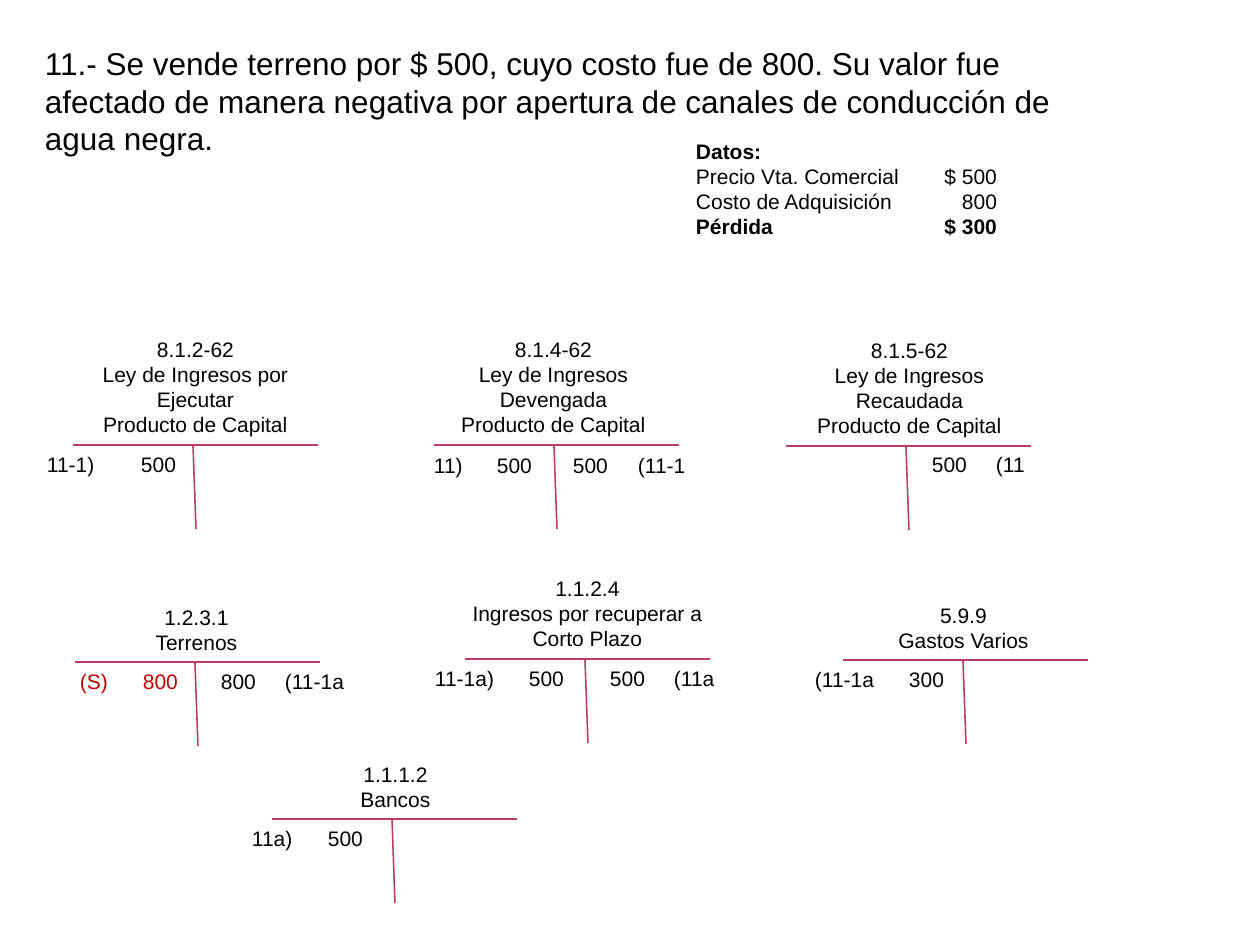
from dataclasses import dataclass
from typing import Any

from lxml.etree import SubElement
from pptx import Presentation
from pptx.dml.color import RGBColor
from pptx.enum.shapes import MSO_CONNECTOR
from pptx.enum.text import MSO_ANCHOR, PP_ALIGN
from pptx.oxml.ns import qn
from pptx.util import Emu, Pt

COLORS = {"text": "000000", "rule": "B83D68", "opening": "C00000"}
FONT = "Arial"
INSET = 13
TITLE_WIDTH = 267

# rule left, rule top, title left, title height, title inset, title lines
ACCOUNTS = [
    (73, 445, 62, 115, 25,
     ["8.1.2-62", "Ley de Ingresos por Ejecutar", "Producto de Capital"]),
    (434, 445, 420, 115, 25,
     ["8.1.4-62", "Ley de Ingresos Devengada", "Producto de Capital"]),
    (786, 446, 776, 115, 25,
     ["8.1.5-62", "Ley de Ingresos Recaudada", "Producto de Capital"]),
    (75, 662, 63, 64, INSET, ["1.2.3.1", "Terrenos"]),
    (465, 659, 454, 90, INSET, ["1.1.2.4", "Ingresos por recuperar a Corto Plazo"]),
    (843, 660, 830, 64, INSET, ["5.9.9", "Gastos Varios"]),
    (272, 819, 262, 64, INSET, ["1.1.1.2", "Bancos"]),
]

# box left, top, width, first text left, second text left, first text, second text, color
ENTRIES = [
    (5, 445, 186, 47, 141, "11-1)", "500", "text"),
    (369, 446, 186, 434, 497, "11)", "500", "text"),
    (556, 446, 186, 573, 638, "500", "(11-1", "text"),
    (908, 445, 186, 932, 996, "500", "(11", "text"),
    (9, 662, 186, 80, 143, "(S)", "800", "opening"),
    (198, 662, 186, 221, 285, "800", "(11-1a", "text"),
    (399, 659, 186, 435, 529, "11-1a)", "500", "text"),
    (586, 659, 186, 610, 674, "500", "(11a", "text"),
    (756, 660, 207, 815, 909, "(11-1a", "300", "text"),
    (231, 819, 162, 252, 328, "11a)", "500", "text"),
]


def px(length):
    return Emu(round(length * 914400 / 126))


def add_tabs(paragraph, stops):
    """Set tab stops, each a (position in px, alignment) pair."""
    tab_list = SubElement(paragraph._p.get_or_add_pPr(), qn("a:tabLst"))
    for position, alignment in stops:
        SubElement(tab_list, qn("a:tab"), pos=str(px(position)), algn=alignment)


def write(paragraph, text, size=12, color="text", bold=False, align=PP_ALIGN.LEFT, tabs=()):
    paragraph.alignment = align
    if tabs:
        add_tabs(paragraph, tabs)
    run = paragraph.add_run()
    run.text = text
    run.font.name = FONT
    run.font.size = Pt(size)
    run.font.bold = bold
    run.font.color.rgb = RGBColor.from_string(COLORS[color])


@dataclass
class LedgerSlide:
    slide: Any
    rule_width: float = 0.9

    def text(self, left, top, width, height, lines, inset=INSET, anchor=MSO_ANCHOR.TOP):
        """Add a text box; each line is a (text, format) pair."""
        box = self.slide.shapes.add_textbox(px(left), px(top), px(width), px(height))
        frame = box.text_frame
        frame.word_wrap = True
        frame.vertical_anchor = anchor
        frame.margin_left = frame.margin_right = px(inset)
        for index, (text, style) in enumerate(lines):
            paragraph = frame.add_paragraph() if index else frame.paragraphs[0]
            write(paragraph, text, **style)

    def rule(self, shapes, start_x, start_y, end_x, end_y):
        line = shapes.add_connector(
            MSO_CONNECTOR.STRAIGHT, px(start_x), px(start_y), px(end_x), px(end_y))
        line.line.color.rgb = RGBColor.from_string(COLORS["rule"])
        line.line.width = Pt(self.rule_width)
        SubElement(line._element.spPr, qn("a:effectLst"))

    def account(self, left, top, title_left, title_height, inset, title):
        """Add a T-account: its rules and the title above them."""
        shapes = self.slide.shapes.add_group_shape().shapes
        self.rule(shapes, left, top, left + 245, top)
        self.rule(shapes, left + 120, top, left + 123, top + 84)
        lines = [(line, {"align": PP_ALIGN.CENTER}) for line in title]
        self.text(title_left, top - title_height, TITLE_WIDTH, title_height, lines, inset)

    def entry(self, left, top, width, first_x, second_x, first, second, color):
        """Add one side of an account: a reference and an amount at two tab stops."""
        stops = [(x - left - INSET, "l") for x in (first_x, second_x)]
        style = {"color": color, "tabs": stops}
        self.text(left, top, width, 38, [(f"\t{first}\t{second}", style)])


def main():
    presentation = Presentation()
    presentation.slide_width, presentation.slide_height = px(1260), px(945)
    ledger = LedgerSlide(presentation.slides.add_slide(presentation.slide_layouts[6]))

    statement = (
        "11.- Se vende terreno por $ 500, cuyo costo fue de 800. Su valor fue afectado "
        "de manera negativa por apertura de canales de conducción de agua negra.")
    ledger.text(32, 37, 1058, 127, [(statement, {"size": 18})], anchor=MSO_ANCHOR.MIDDLE)

    amount = [(301, "r")]
    ledger.text(683, 132, 349, 140, [
        ("Datos:", {"bold": True}),
        ("Precio Vta. Comercial\t$ 500", {"tabs": amount}),
        ("Costo de Adquisición\t800", {"tabs": amount}),
        ("Pérdida\t$ 300", {"bold": True, "tabs": amount}),
    ])

    for account in ACCOUNTS:
        ledger.account(*account)
    for entry in ENTRIES:
        ledger.entry(*entry)
    presentation.save("out.pptx")


if __name__ == "__main__":
    main()
